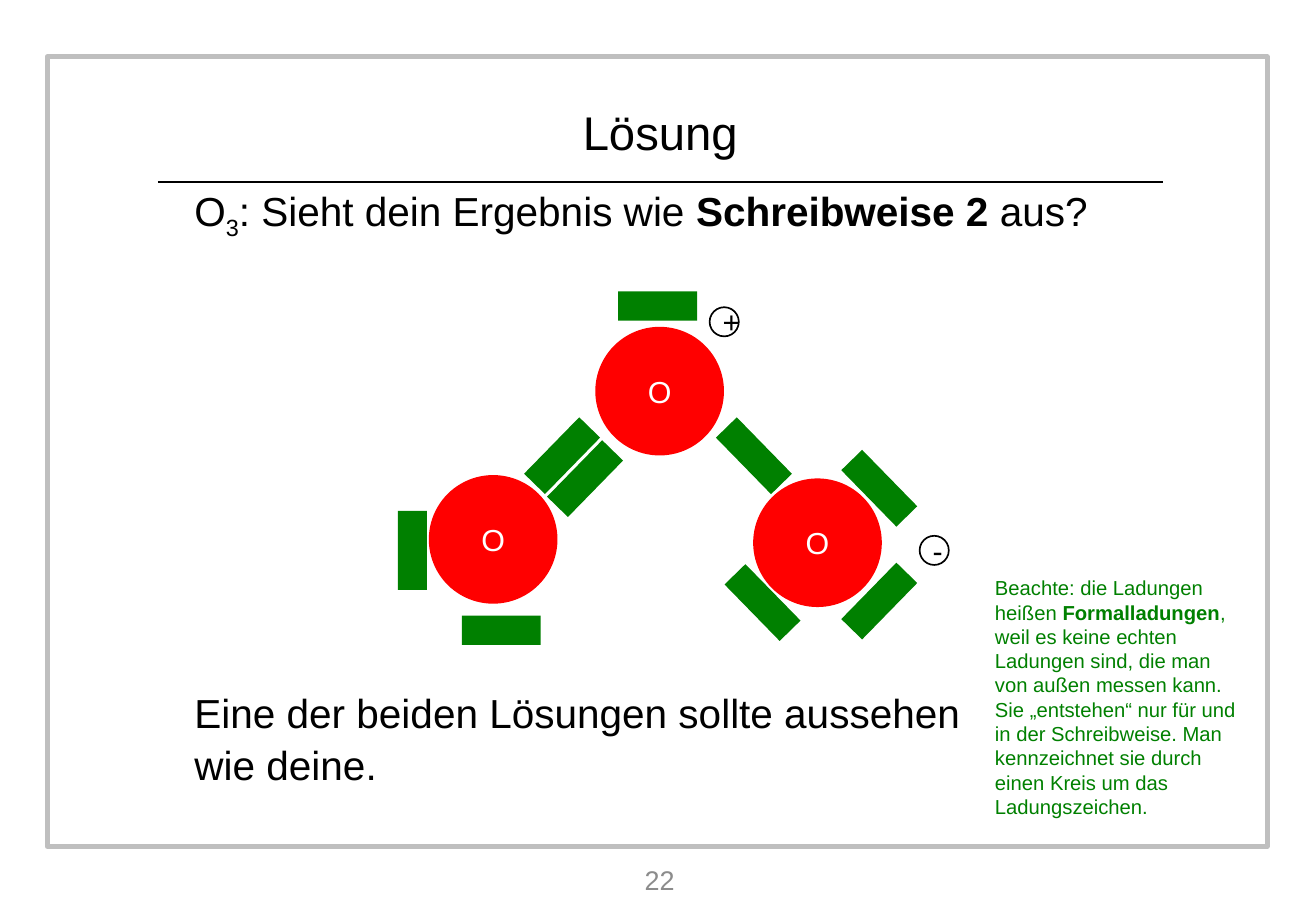
from lxml import etree
from pptx import Presentation
from pptx import util as u
from pptx.dml.color import RGBColor
from pptx.enum import shapes, text
from pptx.oxml.ns import qn

BLACK, WHITE, GREY, RED, GREEN = "000000", "FFFFFF", "BFBFBF", "FF0000", "008000"
CENTER, LEFT = text.PP_ALIGN.CENTER, text.PP_ALIGN.LEFT
TOP, MIDDLE = text.MSO_ANCHOR.TOP, text.MSO_ANCHOR.MIDDLE
RECT, OVAL = shapes.MSO_SHAPE.RECTANGLE, shapes.MSO_SHAPE.OVAL


def rgb(code):
    return RGBColor.from_string(code)


class Deck:
    """Holds the style and the current slide and draws each kind of element."""

    font = "Arial"

    def __init__(self, width, height):
        self.prs = Presentation()
        self.prs.slide_width, self.prs.slide_height = u.Cm(width), u.Cm(height)
        self.s = self.prs.slides.add_slide(self.prs.slide_layouts[1])

    def add_run(self, p, words, size, color, bold=False, baseline=None):
        r = p.add_run()
        r.text = words
        r.font.name, r.font.size, r.font.bold = self.font, u.Pt(size), bold
        r.font.color.rgb = rgb(color)
        if baseline:
            r.font._element.set("baseline", str(baseline))

    def fill_text(self, sp, paragraphs, size, color, align=LEFT, anchor=MIDDLE, wrap=True):
        tf = sp.text_frame
        tf.auto_size = text.MSO_AUTO_SIZE.NONE
        tf.word_wrap, tf.vertical_anchor = wrap, anchor
        for i, (before, runs) in enumerate(paragraphs):
            p = tf.paragraphs[0] if i == 0 else tf.add_paragraph()
            p.alignment, p.line_spacing = align, 1.0
            p.space_before, p.space_after = u.Pt(before), u.Pt(0)
            for words, *style in runs:
                self.add_run(p, words, size, color, *style)
        return tf

    def place(self, sp, x, y, w, h):
        sp.left, sp.top, sp.width, sp.height = map(u.Cm, (x, y, w, h))
        return sp

    def title(self, words, box, size):
        sp = self.place(self.s.shapes.title, *box)
        self.fill_text(sp, [(0, [(words,)])], size, BLACK, CENTER, wrap=False)

    def body(self, paragraphs, box, size):
        sp = self.place(self.s.placeholders[1], *box)
        tf = self.fill_text(sp, paragraphs, size, BLACK, anchor=TOP)
        tf.margin_top = tf.margin_bottom = 0
        for p in tf.paragraphs:
            pPr = p._p.get_or_add_pPr()
            pPr.set("marL", "0")
            pPr.set("indent", "0")
            etree.SubElement(pPr, qn("a:buNone"))

    def label(self, runs, box, size, color, align=LEFT, anchor=TOP):
        sp = self.s.shapes.add_textbox(*map(u.Cm, box))
        self.fill_text(sp, [(0, runs)], size, color, align, anchor)

    def shape(self, kind, box, fill=None, line=None, weight=1.0):
        sp = self.s.shapes.add_shape(kind, *map(u.Cm, box))
        sp.shadow.inherit = False
        if fill:
            sp.fill.solid()
            sp.fill.fore_color.rgb = rgb(fill)
        else:
            sp.fill.background()
        if line:
            sp.line.color.rgb = rgb(line)
            sp.line.width = u.Pt(weight)
        else:
            sp.line.fill.background()
        return sp

    def circle(self, words, cx, cy, d, fill, color, line=None):
        sp = self.shape(OVAL, (cx - d / 2, cy - d / 2, d, d), fill, line)
        self.fill_text(sp, [(0, [(words,)])], 18, color, CENTER)

    def electron_pair(self, cx, cy, angle, w=1.65, h=0.61):
        sp = self.shape(RECT, (cx - w / 2, cy - h / 2, w, h), GREEN)
        sp.rotation = angle

    def rule(self, x1, x2, y, weight):
        c = self.s.shapes.add_connector(
            shapes.MSO_CONNECTOR.STRAIGHT, u.Cm(x1), u.Cm(y), u.Cm(x2), u.Cm(y))
        c.line.color.rgb, c.line.width = rgb(BLACK), u.Pt(weight)
        etree.SubElement(c._element.spPr, qn("a:effectLst"))


def main():
    deck = Deck(27.51, 19.05)
    deck.shape(RECT, (0.99, 1.19, 25.5, 16.51), line=GREY, weight=3)
    deck.rule(3.3, 24.31, 3.81, 1.5)
    deck.title("Lösung", (11.91, 2.01, 3.78, 1.5), 28)
    deck.body([
        (0, [("O",), ("3", False, -25000), (": Sieht dein Ergebnis wie ",),
             ("Schreibweise 2 ", True), ("aus?",)]),
        (265, [("Eine der beiden Lösungen sollte aussehen",)]),
        (1.5, [("wie deine.",)]),
    ], (3.81, 3.89, 19.99, 12.3), 24)
    deck.label([("22",)], (10.69, 17.91, 6.2, 0.99), 16, "8C8C8C", CENTER, MIDDLE)

    for cx, cy in ((13.79, 8.18), (10.31, 11.28), (17.09, 11.35)):
        deck.circle("O", cx, cy, 2.69, RED, WHITE)
    for sign, cx, cy in (("+", 15.14, 6.73), ("-", 19.53, 11.51)):
        deck.circle(sign, cx, cy, 0.61, WHITE, BLACK, BLACK)

    tilt = 45.7
    pairs = {
        0: [(13.75, 6.4), (10.48, 13.18)],
        90: [(8.62, 11.51)],
        tilt: [(15.94, 12.6), (15.76, 9.53), (18.38, 10.21)],
        360 - tilt: [(11.75, 9.53), (12.23, 10.01), (18.38, 12.57)],
    }
    for angle, centers in pairs.items():
        for cx, cy in centers:
            deck.electron_pair(cx, cy, angle)

    deck.label([
        ("Beachte: die Ladungen heißen ",), ("Formalladungen", True),
        (", weil es keine echten Ladungen sind, die man von außen messen kann. "
         "Sie „entstehen“ nur für und in der Schreibweise. Man kennzeichnet sie "
         "durch einen Kreis um das Ladungszeichen.",),
    ], (20.55, 11.91, 5.59, 5.38), 12, GREEN)
    deck.prs.save("out.pptx")


if __name__ == "__main__":
    main()
